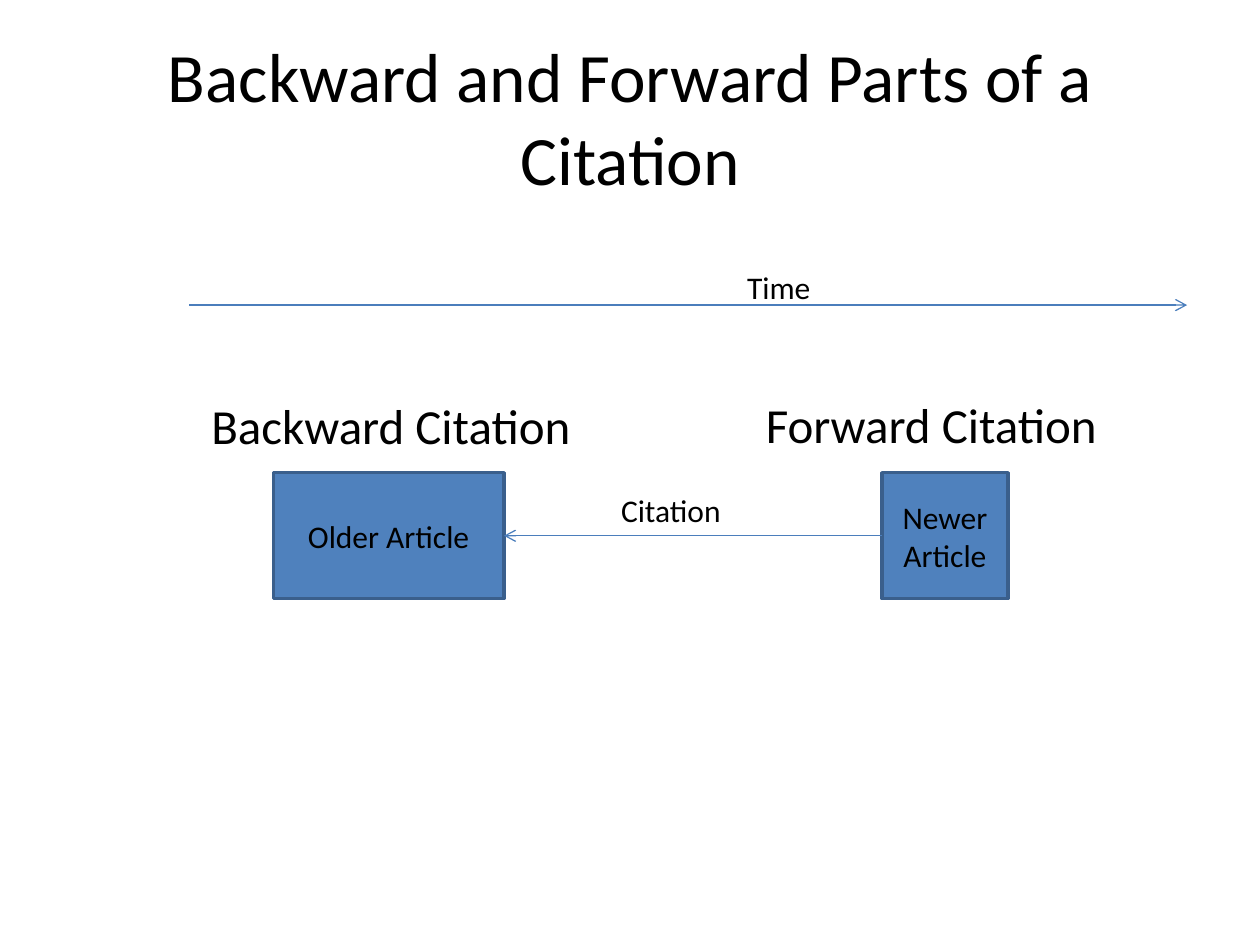
from dataclasses import dataclass

from pptx import Presentation
from pptx.dml.color import RGBColor
from pptx.enum.shapes import MSO_CONNECTOR, MSO_SHAPE
from pptx.enum.text import MSO_ANCHOR, MSO_AUTO_SIZE, PP_ALIGN
from pptx.oxml.ns import qn
from pptx.shapes.autoshape import Shape
from pptx.shapes.connector import Connector
from pptx.slide import Slide
from pptx.util import Cm, Pt
from lxml.etree import SubElement


@dataclass(frozen=True)
class Theme:
    font: str = "Calibri"
    text: RGBColor = RGBColor(0, 0, 0)
    fill: RGBColor = RGBColor(0x4F, 0x81, 0xBD)
    border: RGBColor = RGBColor(0x3A, 0x5F, 0x8C)
    arrow: RGBColor = RGBColor(0x4B, 0x7E, 0xBC)
    title_size: float = 39.6
    heading_size: float = 28
    body_size: float = 18
    border_width: float = 2
    arrow_width: float = 0.75


@dataclass(frozen=True)
class Item:
    """A text and its place in centimetres."""
    text: str
    left: float
    top: float
    width: float
    height: float
    size: float

    @property
    def bounds(self) -> tuple[Cm, Cm, Cm, Cm]:
        return Cm(self.left), Cm(self.top), Cm(self.width), Cm(self.height)


THEME = Theme()
TITLE = Item("Backward and Forward Parts of a Citation", 1.27, 0.76, 22.86, 3.18,
             THEME.title_size)
OLDER = Item("Older Article", 5.51, 9.53, 4.65, 2.54, THEME.body_size)
NEWER = Item("Newer Article", 17.78, 9.53, 2.54, 2.54, THEME.body_size)
LABELS = (
    Item("Time", 14.81, 5.28, 1.8, 1.02, THEME.body_size),
    Item("Citation", 12.27, 9.78, 2.57, 1.02, THEME.body_size),
    Item("Backward Citation", 4.01, 7.85, 7.87, 1.45, THEME.heading_size),
    Item("Forward Citation", 15.19, 7.82, 7.32, 1.45, THEME.heading_size),
)
CENTRED = {"word_wrap": True, "vertical_anchor": MSO_ANCHOR.MIDDLE}
FITTED = {"word_wrap": False, "auto_size": MSO_AUTO_SIZE.SHAPE_TO_FIT_TEXT}


def write(sp: Shape, item: Item, frame_format: dict, align: PP_ALIGN) -> None:
    tf = sp.text_frame
    for name, value in frame_format.items():
        setattr(tf, name, value)
    p = tf.paragraphs[0]
    p.alignment = align
    r = p.add_run()
    r.text = item.text
    for name, value in {"name": THEME.font, "size": Pt(item.size)}.items():
        setattr(r.font, name, value)
    r.font.color.rgb = THEME.text


def add_text(s: Slide, item: Item, frame_format: dict, align: PP_ALIGN) -> None:
    write(s.shapes.add_textbox(*item.bounds), item, frame_format, align)


def add_article(s: Slide, item: Item) -> Shape:
    sp = s.shapes.add_shape(MSO_SHAPE.RECTANGLE, *item.bounds)
    sp.shadow.inherit = False
    sp.fill.solid()
    sp.fill.fore_color.rgb = THEME.fill
    sp.line.color.rgb = THEME.border
    sp.line.width = Pt(THEME.border_width)
    write(sp, item, CENTRED, PP_ALIGN.CENTER)
    return sp


def add_arrow(s: Slide, x1: float, x2: float, y: float) -> Connector:
    """Draw a horizontal arrow that points at x2."""
    cxn = s.shapes.add_connector(MSO_CONNECTOR.STRAIGHT, Cm(x1), Cm(y), Cm(x2), Cm(y))
    cxn.line.color.rgb = THEME.arrow
    cxn.line.width = Pt(THEME.arrow_width)
    SubElement(cxn.line._get_or_add_ln(), qn("a:tailEnd"), type="arrow")
    SubElement(cxn._element.spPr, qn("a:effectLst"))
    return cxn


def main() -> None:
    prs = Presentation()
    prs.slide_width, prs.slide_height = Cm(25.4), Cm(19.05)
    s = prs.slides.add_slide(prs.slide_layouts[6])

    add_text(s, TITLE, CENTRED, PP_ALIGN.CENTER)
    add_arrow(s, 3.81, 23.93, 6.15)
    older, newer = add_article(s, OLDER), add_article(s, NEWER)
    citation = add_arrow(s, NEWER.left, OLDER.left + OLDER.width,
                         NEWER.top + NEWER.height / 2)
    citation.begin_connect(newer, 1)
    citation.end_connect(older, 3)
    for label in LABELS:
        add_text(s, label, FITTED, PP_ALIGN.LEFT)

    prs.save("out.pptx")


if __name__ == "__main__":
    main()
